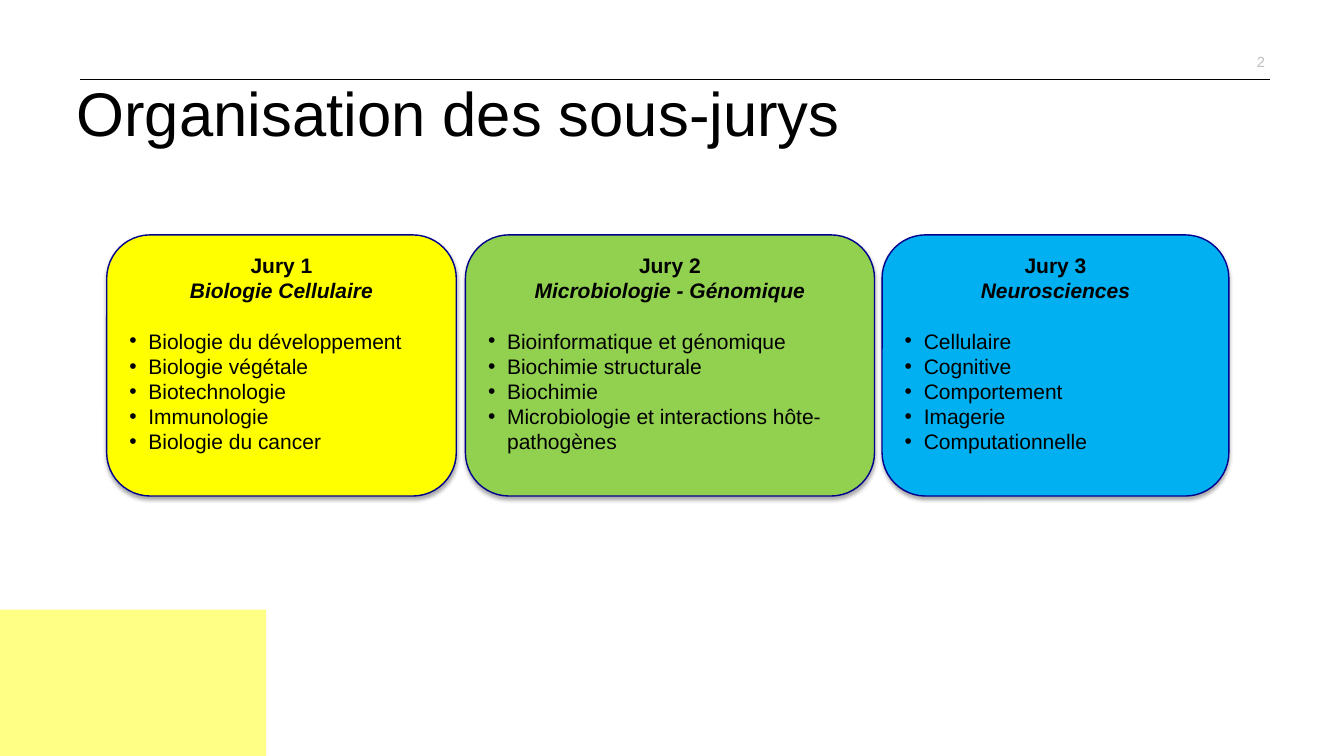
"""Build the slide presenting the three sub-juries and their topics."""
import lxml.etree
import pptx
import pptx.dml.color
import pptx.enum.shapes
import pptx.enum.text
import pptx.oxml
import pptx.oxml.ns
import pptx.util
from pptx.dml.color import RGBColor
from pptx.util import Cm

BLACK = RGBColor(0x00, 0x00, 0x00)
GREY = RGBColor(0xBF, 0xBF, 0xBF)
NAVY = RGBColor(0x00, 0x00, 0x8E)
PALE_YELLOW = RGBColor(0xFF, 0xFE, 0x85)
YELLOW = RGBColor(0xFF, 0xFF, 0x00)
GREEN = RGBColor(0x92, 0xD0, 0x50)
BLUE = RGBColor(0x00, 0xB0, 0xF0)

SHADOW = f"""<a:effectLst {pptx.oxml.ns.nsdecls("a")}>
<a:outerShdw blurRad="39370" dist="22860" dir="5400000" rotWithShape="0">
<a:srgbClr val="000000"><a:alpha val="35000"/></a:srgbClr>
</a:outerShdw></a:effectLst>"""

JURIES = [
    ("Jury 1", "Biologie Cellulaire", YELLOW, 2.69, 8.81,
     ["Biologie du développement", "Biologie végétale", "Biotechnologie",
      "Immunologie", "Biologie du cancer"]),
    ("Jury 2", "Microbiologie - Génomique", GREEN, 11.73, 10.31,
     ["Bioinformatique et génomique", "Biochimie structurale", "Biochimie",
      "Microbiologie et interactions hôte-pathogènes"]),
    ("Jury 3", "Neurosciences", BLUE, 22.23, 8.74,
     ["Cellulaire", "Cognitive", "Comportement", "Imagerie", "Computationnelle"]),
]


def format_font(paragraph, size, color=BLACK, bold=False, italic=False):
    for run in paragraph.runs:
        run.font.name = "Arial"
        run.font.size = pptx.util.Pt(size)
        run.font.color.rgb = color
        run.font.bold = bold
        run.font.italic = italic


def add_text(left, top, width, height, text, size, color):
    text_frame = slide.shapes.add_textbox(Cm(left), Cm(top), Cm(width), Cm(height)).text_frame
    text_frame.word_wrap = True
    text_frame.margin_left = text_frame.margin_right = 0
    text_frame.margin_top = text_frame.margin_bottom = 0
    text_frame.text = text
    format_font(text_frame.paragraphs[0], size, color)
    return text_frame


presentation = pptx.Presentation()
presentation.slide_width = Cm(33.87)
presentation.slide_height = Cm(19.05)
slide = presentation.slides.add_slide(presentation.slide_layouts[6])

number = add_text(24.26, 1.04, 7.62, 1.02, "2", 10.5, GREY)
number.vertical_anchor = pptx.enum.text.MSO_ANCHOR.MIDDLE
number.paragraphs[0].alignment = pptx.enum.text.PP_ALIGN.RIGHT

rule = slide.shapes.add_connector(
    pptx.enum.shapes.MSO_CONNECTOR.STRAIGHT, Cm(2.01), Cm(2.01), Cm(32), Cm(2.01))
rule.line.color.rgb = BLACK
rule.line.width = pptx.util.Pt(0.75)
lxml.etree.SubElement(rule.element.spPr, pptx.oxml.ns.qn("a:effectLst"))

corner = slide.shapes.add_shape(
    pptx.enum.shapes.MSO_SHAPE.RECTANGLE, 0, Cm(15.36), Cm(6.71), Cm(3.69))
corner.shadow.inherit = False
corner.fill.solid()
corner.fill.fore_color.rgb = PALE_YELLOW
corner.line.fill.background()

title = add_text(1.93, 2.11, 30, 1.96, "Organisation des sous-jurys", 44, BLACK)
title.paragraphs[0].line_spacing = 0.9

for name, field, color, left, width, topics in JURIES:
    card = slide.shapes.add_shape(
        pptx.enum.shapes.MSO_SHAPE.ROUNDED_RECTANGLE, Cm(left), Cm(5.92), Cm(width), Cm(6.58))
    card.fill.solid()
    card.fill.fore_color.rgb = color
    card.line.color.rgb = NAVY
    card.line.width = pptx.util.Pt(1)
    card.element.spPr.append(pptx.oxml.parse_xml(SHADOW))

    text_frame = card.text_frame
    text_frame.word_wrap = True
    text_frame.vertical_anchor = pptx.enum.text.MSO_ANCHOR.TOP
    text_frame.text = "\n".join([name, field, *topics])
    heading, subheading, *bullets = text_frame.paragraphs
    for paragraph in (heading, subheading):
        paragraph.alignment = pptx.enum.text.PP_ALIGN.CENTER
        format_font(paragraph, 15, bold=True, italic=paragraph is subheading)
    subheading.space_after = pptx.util.Pt(18)
    for paragraph in bullets:
        paragraph.alignment = pptx.enum.text.PP_ALIGN.LEFT
        properties = paragraph._p.get_or_add_pPr()
        properties.set("marL", str(Cm(0.48)))
        properties.set("indent", str(-Cm(0.48)))
        lxml.etree.SubElement(properties, pptx.oxml.ns.qn("a:buFont"), typeface="Arial")
        lxml.etree.SubElement(properties, pptx.oxml.ns.qn("a:buChar"), char="•")
        format_font(paragraph, 15)

presentation.save("out.pptx")
